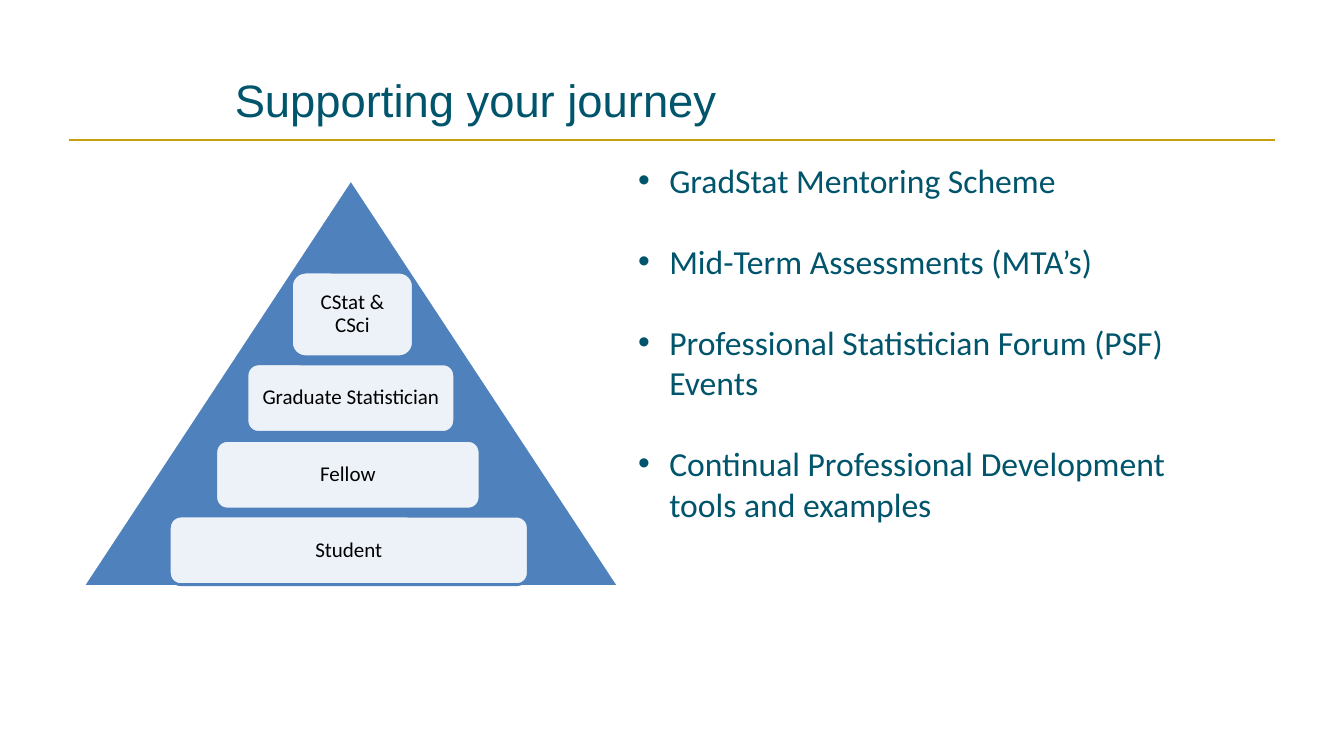
"""Build the "Supporting your journey" slide with its membership pyramid."""
from lxml import etree
from pptx import Presentation
from pptx.dml.color import RGBColor
from pptx.enum.shapes import MSO_CONNECTOR, MSO_SHAPE
from pptx.enum.text import MSO_ANCHOR, PP_ALIGN
from pptx.oxml.ns import qn
from pptx.util import Inches, Pt

TEAL, GOLD, BLUE, WHITE, BLACK = "00546B", "C6A00C", "4F81BD", "FFFFFF", "000000"


def color(hex_value):
    return RGBColor.from_string(hex_value)


def style_font(font, name, size, hex_value):
    font.name = name
    font.size = Pt(size)
    font.color.rgb = color(hex_value)


presentation = Presentation()
presentation.slide_width = Inches(13.33)
presentation.slide_height = Inches(7.5)
slide = presentation.slides.add_slide(presentation.slide_layouts[6])
shapes = slide.shapes

rule = shapes.add_connector(
    MSO_CONNECTOR.STRAIGHT, Inches(0.68), Inches(1.39), Inches(12.65), Inches(1.39))
rule.line.color.rgb = color(GOLD)
rule.line.width = Pt(1.25)
etree.SubElement(rule._element.spPr, qn("a:effectLst"))

heading = shapes.add_textbox(Inches(2.23), Inches(0.73), Inches(7.05), Inches(0.51)).text_frame
heading.word_wrap = True
heading.vertical_anchor = MSO_ANCHOR.MIDDLE
heading.text = "Supporting your journey"
style_font(heading.paragraphs[0].font, "Arial", 32.4, TEAL)

pyramid = shapes.add_shape(
    MSO_SHAPE.ISOSCELES_TRIANGLE, Inches(0.82), Inches(1.78), Inches(5.32), Inches(4.04))
pyramid.shadow.inherit = False
pyramid.fill.solid()
pyramid.fill.fore_color.rgb = color(BLUE)
pyramid.line.color.rgb = color(WHITE)
pyramid.line.width = Pt(2)

grades = [
    ("CStat & CSci", 2.89, 2.7, 1.21, 0.84),
    ("Graduate Statistician", 2.45, 3.61, 2.06, 0.68),
    ("Fellow", 2.14, 4.37, 2.62, 0.68),
    ("Student", 1.68, 5.12, 3.56, 0.68),
]
label_format = {
    "margin_left": Inches(0.06), "margin_right": Inches(0.06),
    "margin_top": Inches(0.06), "margin_bottom": Inches(0.06),
    "word_wrap": True, "vertical_anchor": MSO_ANCHOR.MIDDLE,
}
for grade, *bounds in grades:
    tier = shapes.add_shape(MSO_SHAPE.ROUNDED_RECTANGLE, *map(Inches, bounds))
    tier.shadow.inherit = False
    tier.fill.solid()
    tier.fill.fore_color.rgb = color(WHITE)
    tint = tier._element.spPr.find(qn("a:solidFill")).find(qn("a:srgbClr"))
    etree.SubElement(tint, qn("a:alpha"), val="90000")
    tier.line.color.rgb = color(BLUE)
    tier.line.width = Pt(2)
    label = tier.text_frame
    for attribute, value in label_format.items():
        setattr(label, attribute, value)
    label.text = grade
    label.paragraphs[0].alignment = PP_ALIGN.CENTER
    label.paragraphs[0].line_spacing = 0.9
    style_font(label.paragraphs[0].font, "Calibri", 15, BLACK)

support = [
    "GradStat Mentoring Scheme",
    "Mid-Term Assessments (MTA’s)",
    "Professional Statistician Forum (PSF) Events",
    "Continual Professional Development tools and examples",
]
offers = shapes.add_textbox(Inches(6.23), Inches(1.54), Inches(5.56), Inches(4.27)).text_frame
offers.word_wrap = True
for index, offer in enumerate(support):
    item = offers.add_paragraph() if index else offers.paragraphs[0]
    item.text = offer
    properties = item._p.get_or_add_pPr()
    properties.set("marL", str(Inches(0.31)))
    properties.set("indent", str(-Inches(0.31)))
    etree.SubElement(properties, qn("a:buFont"), typeface="Arial")
    etree.SubElement(properties, qn("a:buChar"), char="•")
    item.space_before = Pt(29 if index else 0)
    style_font(item.font, "Calibri", 24, TEAL)

presentation.save("out.pptx")
